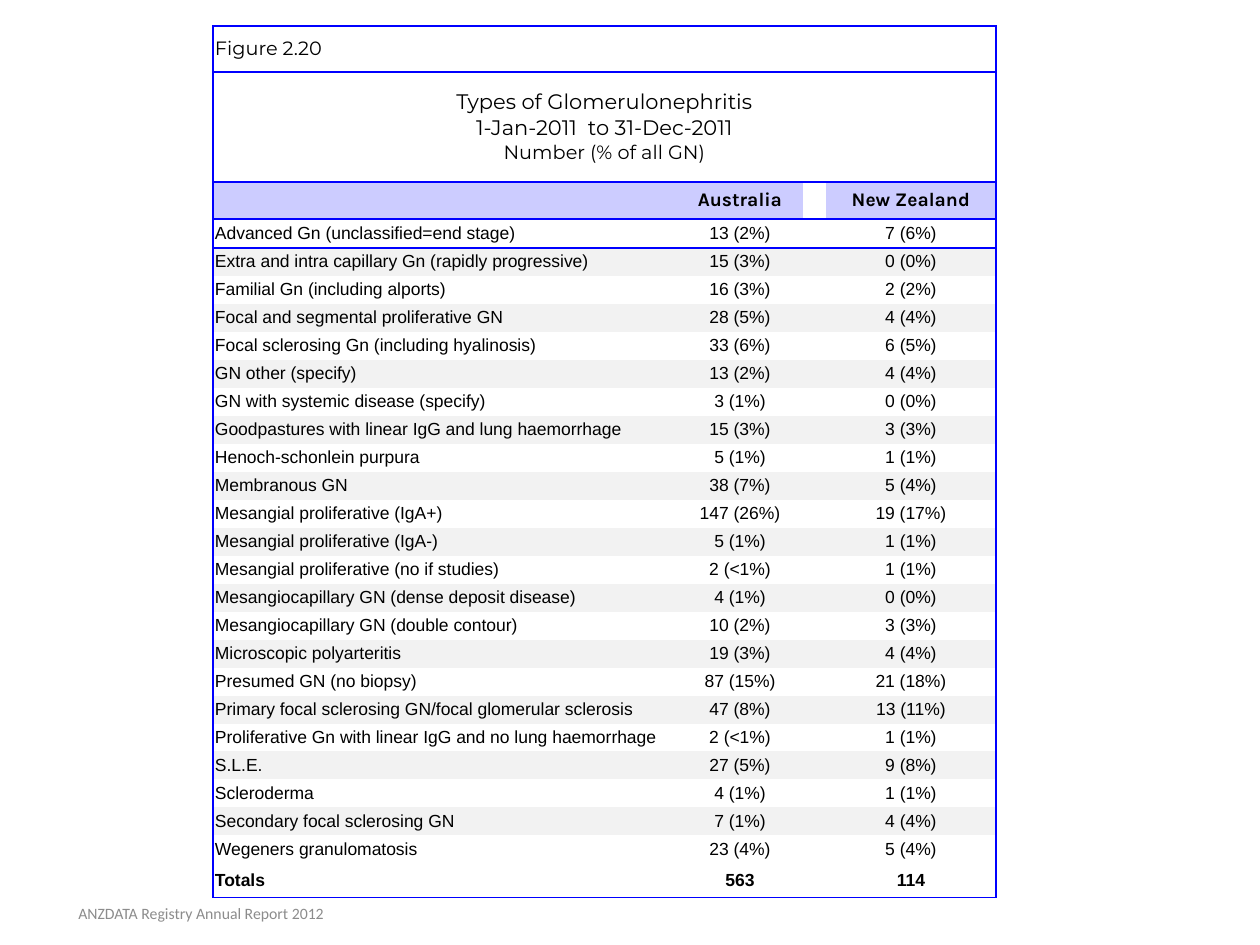
from lxml import etree
from pptx import Presentation
from pptx.dml.color import RGBColor
from pptx.enum.text import MSO_ANCHOR, PP_ALIGN
from pptx.oxml.ns import qn
from pptx.util import Pt

PX = 914400 // 126
MID = MSO_ANCHOR.MIDDLE
LEFT, CENTER = PP_ALIGN.LEFT, PP_ALIGN.CENTER
PLAIN = "{2D5ABB26-0587-4C30-8999-92F81FD0307C}"  # no style, no grid
BLACK, BLUE, LILAC, BAND, GREY = "000000", "0000FF", "CCCCFF", "F2F2F2", "8C8C8C"

FIGURE = "Figure 2.20"
TITLE = "Types of Glomerulonephritis\n1-Jan-2011  to 31-Dec-2011\nNumber (% of all GN)"
HEADS = ("", "Australia", "New Zealand")
DATA = [
    ("Advanced Gn (unclassified=end stage)", "13 (2%)", "7 (6%)"),
    ("Extra and intra capillary Gn (rapidly progressive)", "15 (3%)", "0 (0%)"),
    ("Familial Gn (including alports)", "16 (3%)", "2 (2%)"),
    ("Focal and segmental proliferative GN", "28 (5%)", "4 (4%)"),
    ("Focal sclerosing Gn (including hyalinosis)", "33 (6%)", "6 (5%)"),
    ("GN other (specify)", "13 (2%)", "4 (4%)"),
    ("GN with systemic disease (specify)", "3 (1%)", "0 (0%)"),
    ("Goodpastures with linear IgG and lung haemorrhage", "15 (3%)", "3 (3%)"),
    ("Henoch-schonlein purpura", "5 (1%)", "1 (1%)"),
    ("Membranous GN", "38 (7%)", "5 (4%)"),
    ("Mesangial proliferative (IgA+)", "147 (26%)", "19 (17%)"),
    ("Mesangial proliferative (IgA-)", "5 (1%)", "1 (1%)"),
    ("Mesangial proliferative (no if studies)", "2 (<1%)", "1 (1%)"),
    ("Mesangiocapillary GN (dense deposit disease)", "4 (1%)", "0 (0%)"),
    ("Mesangiocapillary GN (double contour)", "10 (2%)", "3 (3%)"),
    ("Microscopic polyarteritis", "19 (3%)", "4 (4%)"),
    ("Presumed GN (no biopsy)", "87 (15%)", "21 (18%)"),
    ("Primary focal sclerosing GN/focal glomerular sclerosis", "47 (8%)", "13 (11%)"),
    ("Proliferative Gn with linear IgG and no lung haemorrhage", "2 (<1%)", "1 (1%)"),
    ("S.L.E.", "27 (5%)", "9 (8%)"),
    ("Scleroderma", "4 (1%)", "1 (1%)"),
    ("Secondary focal sclerosing GN", "7 (1%)", "4 (4%)"),
    ("Wegeners granulomatosis", "23 (4%)", "5 (4%)"),
]
TOTALS = ("Totals", "563", "114")
FOOTER = "ANZDATA Registry Annual Report 2012"

COLS = (464, 126, 23, 170)
ROWS = [46, 110, 37, 29] + [28] * (len(DATA) - 1) + [34]
LAST = len(ROWS) - 1


def color(code):
    return RGBColor.from_string(code)


def style(frame, face, size, bold=False, align=LEFT, tint=BLACK):
    for para in frame.paragraphs:
        para.alignment = align
        for run in para.runs:
            font = run.font
            font.name, font.size, font.bold = face, Pt(size), bold
            font.color.rgb = color(tint)
        if not para.runs:  # keeps empty cells from growing the row
            etree.SubElement(para._p, qn("a:endParaRPr"), sz=str(size * 100))


def border(cell, sides):
    props = cell._tc.get_or_add_tcPr()
    for side in "LRTB":
        if side in sides:
            line = etree.SubElement(props, qn("a:ln" + side), w=str(Pt(1)))
            fill = etree.SubElement(line, qn("a:solidFill"))
            etree.SubElement(fill, qn("a:srgbClr"), val=BLUE)


def look(row):
    """Face, size and bold of a row's text."""
    if row < 2:
        return "Montserrat", 11 + row, False
    if row == 2:
        return "Karla", 11, True
    return "Arial", 10, row == LAST


def shade(row, col):
    if row == 2:
        return None if col == 2 else LILAC
    return BAND if 3 < row < LAST and row % 2 == 0 else None


def edges(row, col):
    sides = "L" if col == 0 or row < 2 else ""
    sides += "R" if col == 3 or row < 2 else ""
    sides += "T" if row <= 3 else ""
    return sides + ("B" if row <= 2 or row == LAST else "")


prs = Presentation()
prs.slide_width, prs.slide_height = 1260 * PX, 945 * PX
slide = prs.slides.add_slide(prs.slide_layouts[6])

# Table grid
table = slide.shapes.add_table(
    len(ROWS), len(COLS), 213 * PX, 26 * PX, sum(COLS) * PX, sum(ROWS) * PX).table
table.first_row = table.horz_banding = False
table._tbl.tblPr.find(qn("a:tableStyleId")).text = PLAIN
for part, width in zip(table.columns, COLS):
    part.width = width * PX
for part, height in zip(table.rows, ROWS):
    part.height = height * PX

# Table text; the third column is a narrow gap
lines = [(FIGURE, "", ""), (TITLE, "", ""), HEADS, *DATA, TOTALS]
for row, (name, aus, nz) in enumerate(lines):
    for col, text in enumerate((name, aus, "", nz)):
        cell = table.cell(row, col)
        cell.vertical_anchor = MID
        cell.margin_left = cell.margin_right = 2 * PX
        cell.margin_top = cell.margin_bottom = 2 * PX
        cell.text_frame.text = text
        style(cell.text_frame, *look(row), CENTER if col or row == 1 else LEFT)
        border(cell, edges(row, col))
        tint = shade(row, col)
        if tint:
            cell.fill.solid()
            cell.fill.fore_color.rgb = color(tint)
        else:
            cell.fill.background()
for row in (0, 1):
    table.cell(row, 0).merge(table.cell(row, 3))
table.cell(1, 0).text_frame.paragraphs[-1].runs[0].font.size = Pt(11)

# Footer
frame = slide.shapes.add_textbox(1 * PX, 888 * PX, 400 * PX, 51 * PX).text_frame
frame.word_wrap = True
frame.vertical_anchor = MID
frame.text = FOOTER
style(frame, "Calibri", 9, align=CENTER, tint=GREY)

prs.save("out.pptx")
